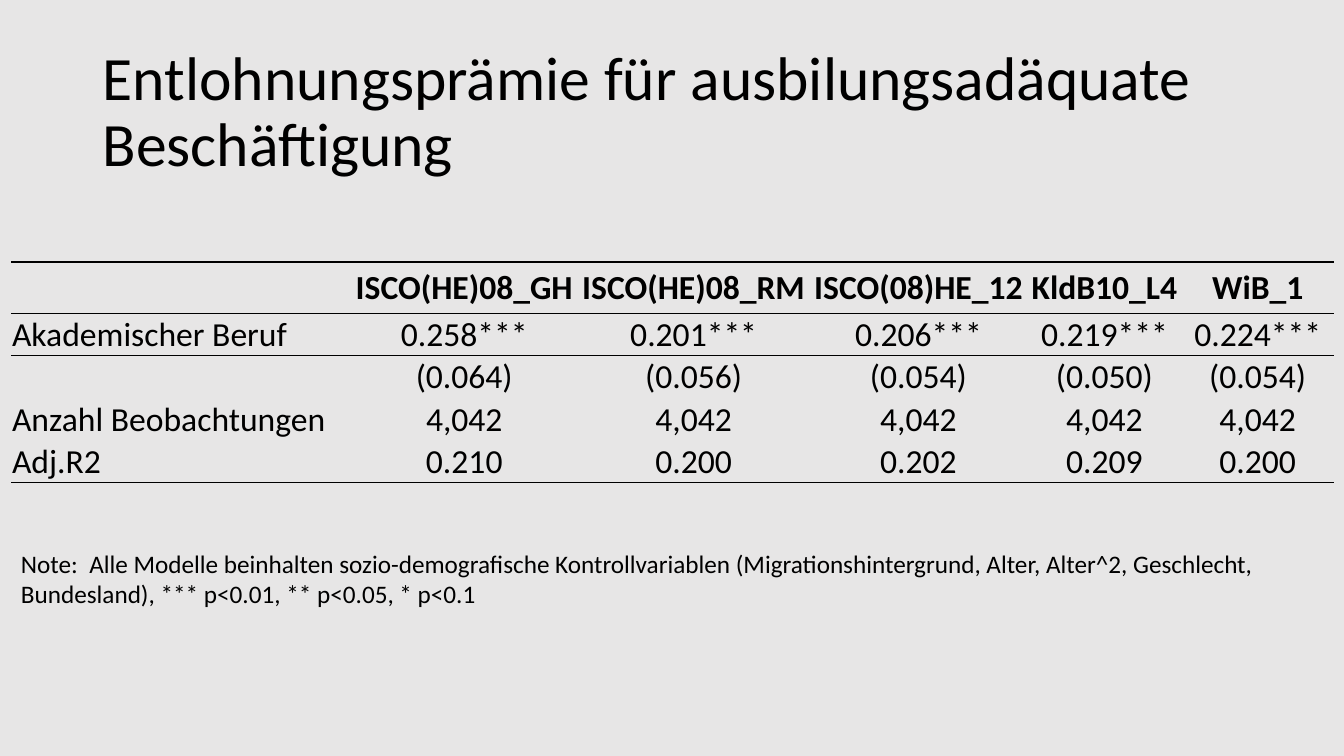
from lxml.etree import SubElement
from pptx import Presentation
from pptx.dml.color import RGBColor
from pptx.enum.text import MSO_ANCHOR, PP_ALIGN
from pptx.oxml.ns import qn
from pptx.util import Pt

PX = 9144  # EMU, 100 px to the inch
FONT = "Calibri"
COLORS = {"background": "E7E6E6", "ink": "000000"}


def style_text(text_frame, size, bold=False):
    for paragraph in text_frame.paragraphs:
        for run in paragraph.runs:
            run.font.name = FONT
            run.font.size = Pt(size)
            run.font.bold = bold
            run.font.color.rgb = RGBColor.from_string(COLORS["ink"])


def set_borders(cell, ruled_sides):
    """Rule the given sides (of L, R, T, B) and clear the others."""
    properties = cell._tc.get_or_add_tcPr()
    for side in "LRTB":
        line = SubElement(properties, qn(f"a:ln{side}"), w=str(Pt(1)))
        if side in ruled_sides:
            fill = SubElement(line, qn("a:solidFill"))
            SubElement(fill, qn("a:srgbClr"), val=COLORS["ink"])
        else:
            SubElement(line, qn("a:noFill"))


presentation = Presentation()
presentation.slide_width = 1333 * PX
presentation.slide_height = 750 * PX
slide = presentation.slides.add_slide(presentation.slide_layouts[6])
slide.background.fill.solid()
slide.background.fill.fore_color.rgb = RGBColor.from_string(COLORS["background"])

# Title
title = slide.shapes.add_textbox(92 * PX, 40 * PX, 1150 * PX, 145 * PX).text_frame
title.word_wrap = True
title.vertical_anchor = MSO_ANCHOR.MIDDLE
title.text = "Entlohnungsprämie für ausbilungsadäquate Beschäftigung"
title.paragraphs[0].line_spacing = 0.9
style_text(title, 44)

# Regression table
ROWS = [
    ["", "ISCO(HE)08_GH", "ISCO(HE)08_RM", "ISCO(08)HE_12", "KldB10_L4", "WiB_1"],
    ["Akademischer Beruf", "0.258***", "0.201***", "0.206***", "0.219***", "0.224***"],
    ["", "(0.064)", "(0.056)", "(0.054)", "(0.050)", "(0.054)"],
    ["Anzahl Beobachtungen"] + ["4,042"] * 5,
    ["Adj.R2", "0.210", "0.200", "0.202", "0.209", "0.200"],
]
COLUMN_WIDTHS = [337, 225, 230, 216, 153, 151]
ROW_HEIGHTS = [51, 42, 42, 42, 42]
RULED_SIDES = ["TB", "TB", "T", "", "B"]

table = slide.shapes.add_table(
    len(ROWS), len(COLUMN_WIDTHS), 11 * PX, 260 * PX,
    sum(COLUMN_WIDTHS) * PX, sum(ROW_HEIGHTS) * PX,
).table
table.first_row = False
table.horz_banding = False
for column, width in zip(table.columns, COLUMN_WIDTHS):
    column.width = width * PX

for row_index, values in enumerate(ROWS):
    table.rows[row_index].height = ROW_HEIGHTS[row_index] * PX
    for column_index, value in enumerate(values):
        cell = table.cell(row_index, column_index)
        cell.text_frame.text = value
        cell.vertical_anchor = MSO_ANCHOR.MIDDLE
        cell.margin_left = cell.margin_right = cell.margin_top = 1 * PX
        cell.margin_bottom = 0
        if column_index > 0:
            cell.text_frame.paragraphs[0].alignment = PP_ALIGN.CENTER
        style_text(cell.text_frame, 24, bold=row_index == 0)
        set_borders(cell, RULED_SIDES[row_index])
        cell.fill.background()

# Note below the table
note = slide.shapes.add_textbox(11 * PX, 539 * PX, 1263 * PX, 71 * PX).text_frame
note.word_wrap = False
note.text = (
    "Note:  Alle Modelle beinhalten sozio-demografische Kontrollvariablen "
    "(Migrationshintergrund, Alter, Alter^2, Geschlecht,\n"
    "Bundesland), *** p<0.01, ** p<0.05, * p<0.1"
)
style_text(note, 18)

presentation.save("out.pptx")
